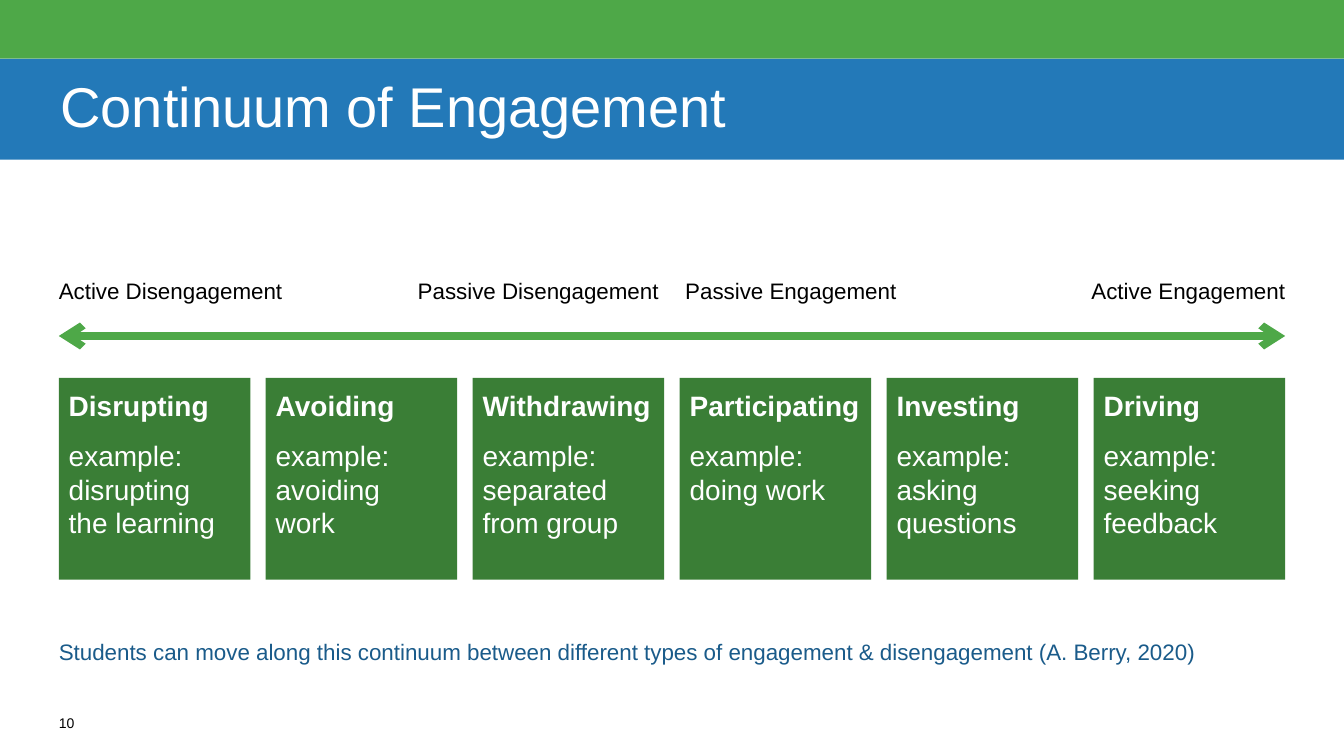
from dataclasses import dataclass

from lxml.etree import SubElement
from pptx import Presentation
from pptx.dml.color import RGBColor
from pptx.enum.shapes import MSO_CONNECTOR, MSO_SHAPE
from pptx.enum.text import MSO_ANCHOR, PP_ALIGN
from pptx.oxml.ns import qn
from pptx.shapes.autoshape import Shape
from pptx.slide import Slide
from pptx.text.text import TextFrame, _Paragraph
from pptx.util import Pt


@dataclass(frozen=True)
class Theme:
    font: str = "Arial"
    green: str = "4EA848"
    dark_green: str = "3A7E36"
    blue: str = "2379B8"
    dark_blue: str = "1A5B8A"
    white: str = "FFFFFF"
    black: str = "000000"
    title_size: float = 40
    card_size: float = 20
    label_size: float = 16
    number_size: float = 10
    spacing: float = 6


@dataclass(frozen=True)
class Box:
    left: float
    top: float
    width: float
    height: float


@dataclass(frozen=True)
class Label:
    text: str
    left: float
    align: PP_ALIGN = PP_ALIGN.LEFT


@dataclass(frozen=True)
class Card:
    heading: str
    example: str


THEME = Theme()
SLIDE_W, SLIDE_H = 960, 540
LEFT, RIGHT = 42, 918
LABEL_W = 210
CARD_W = 136.8

LABELS = [
    Label("Active Disengagement", LEFT),
    Label("Passive Disengagement", 260.5, PP_ALIGN.RIGHT),
    Label("Passive Engagement", 489.5),
    Label("Active Engagement", RIGHT - LABEL_W, PP_ALIGN.RIGHT),
]
CARDS = [
    Card("Disrupting", "example: disrupting\nthe learning"),
    Card("Avoiding", "example: avoiding\nwork"),
    Card("Withdrawing", "example: separated from group"),
    Card("Participating", "example: doing work"),
    Card("Investing", "example: asking questions"),
    Card("Driving", "example: seeking feedback"),
]


def rgb(color: str) -> RGBColor:
    return RGBColor.from_string(color)


def set_margins(tf: TextFrame, x: float, y: float) -> None:
    tf.word_wrap = True
    tf.margin_left = tf.margin_right = Pt(x)
    tf.margin_top = tf.margin_bottom = Pt(y)


def add_text(p: _Paragraph, text: str, size: float, color: str, bold: bool = False) -> None:
    """Add one run per line, with line breaks between them."""
    for i, line in enumerate(text.split("\n")):
        if i:
            p.add_line_break()
        r = p.add_run()
        r.text = line
        r.font.name = THEME.font
        r.font.size = Pt(size)
        r.font.bold = bold
        r.font.color.rgb = rgb(color)


def add_rect(s: Slide, box: Box, color: str) -> Shape:
    sp = s.shapes.add_shape(MSO_SHAPE.RECTANGLE, Pt(box.left), Pt(box.top),
                            Pt(box.width), Pt(box.height))
    sp.shadow.inherit = False
    sp.fill.solid()
    sp.fill.fore_color.rgb = rgb(color)
    sp.line.fill.background()
    return sp


def add_textbox(s: Slide, box: Box, text: str, size: float, color: str,
                align: PP_ALIGN = PP_ALIGN.LEFT) -> None:
    sp = s.shapes.add_textbox(Pt(box.left), Pt(box.top), Pt(box.width), Pt(box.height))
    set_margins(sp.text_frame, 0, 0)
    p = sp.text_frame.paragraphs[0]
    p.alignment = align
    add_text(p, text, size, color)


def add_title(s: Slide, text: str) -> None:
    sp = add_rect(s, Box(0, 42, SLIDE_W, 72), THEME.blue)
    tf = sp.text_frame
    set_margins(tf, 43.2, 0)
    tf.vertical_anchor = MSO_ANCHOR.MIDDLE
    p = tf.paragraphs[0]
    p.alignment = PP_ALIGN.LEFT
    p.line_spacing = 0.9
    add_text(p, text, THEME.title_size, THEME.white)


def add_double_arrow(s: Slide, y: float) -> None:
    cx = s.shapes.add_connector(MSO_CONNECTOR.STRAIGHT, Pt(LEFT), Pt(y), Pt(RIGHT), Pt(y))
    cx.line.color.rgb = rgb(THEME.green)
    cx.line.width = Pt(5.5)
    ln = cx.line._get_or_add_ln()
    for end in ("a:headEnd", "a:tailEnd"):
        SubElement(ln, qn(end), type="arrow")
    SubElement(cx._element.spPr, qn("a:effectLst"))


def add_card(s: Slide, card: Card, left: float) -> None:
    sp = add_rect(s, Box(left, 270, CARD_W, 144), THEME.dark_green)
    tf = sp.text_frame
    set_margins(tf, 7.2, 7.2)
    tf.vertical_anchor = MSO_ANCHOR.TOP
    heading, example = tf.paragraphs[0], tf.add_paragraph()
    example.space_before = Pt(THEME.spacing)
    for p in (heading, example):
        p.alignment = PP_ALIGN.LEFT
        p.space_after = Pt(THEME.spacing)
    add_text(heading, card.heading, THEME.card_size, THEME.white, bold=True)
    add_text(example, card.example, THEME.card_size, THEME.white)


def main() -> None:
    prs = Presentation()
    prs.slide_width, prs.slide_height = Pt(SLIDE_W), Pt(SLIDE_H)
    s = prs.slides.add_slide(prs.slide_layouts[6])

    add_rect(s, Box(0, 0, SLIDE_W, 42), THEME.green)
    add_title(s, "Continuum of Engagement")
    add_double_arrow(s, 240)
    for label in LABELS:
        add_textbox(s, Box(label.left, 198, LABEL_W, 24.5), label.text,
                    THEME.label_size, THEME.black, label.align)

    pitch = (RIGHT - LEFT - CARD_W) / (len(CARDS) - 1)
    for i, card in enumerate(CARDS):
        add_card(s, card, LEFT + i * pitch)

    add_textbox(s, Box(LEFT, 456, RIGHT - LEFT, 19.4),
                "Students can move along this continuum between different types of "
                "engagement & disengagement (A. Berry, 2020)",
                THEME.label_size, THEME.dark_blue)
    add_textbox(s, Box(LEFT, 510, 30, 18), "10", THEME.number_size, THEME.black)
    prs.save("out.pptx")


if __name__ == "__main__":
    main()
